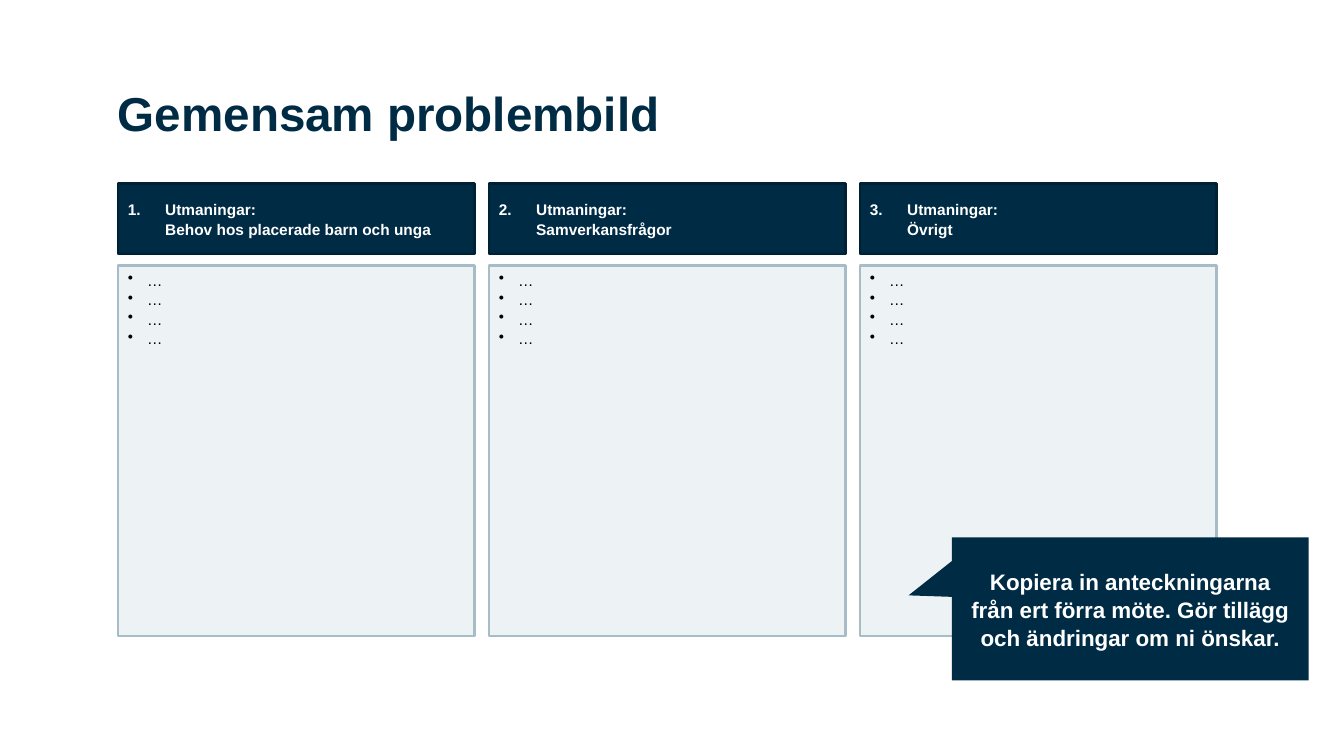
from copy import deepcopy
from dataclasses import dataclass

from lxml import etree
from pptx import Presentation
from pptx.dml.color import RGBColor
from pptx.enum.shapes import MSO_SHAPE
from pptx.enum.text import MSO_ANCHOR, PP_ALIGN
from pptx.oxml.ns import qn
from pptx.util import Inches, Pt

RECTANGLE = MSO_SHAPE.RECTANGLE
CALLOUT = MSO_SHAPE.RECTANGULAR_CALLOUT
TOP, MIDDLE = MSO_ANCHOR.TOP, MSO_ANCHOR.MIDDLE
LEFT, CENTER = PP_ALIGN.LEFT, PP_ALIGN.CENTER
TITLE_ONLY = 5


@dataclass(frozen=True)
class Theme:
    font: str = "Arial"
    navy: RGBColor = RGBColor(0x00, 0x2B, 0x45)
    navy_edge: RGBColor = RGBColor(0x00, 0x20, 0x33)
    pale: RGBColor = RGBColor(0xED, 0xF2, 0xF4)
    pale_edge: RGBColor = RGBColor(0xA6, 0xBC, 0xC6)
    white: RGBColor = RGBColor(0xFF, 0xFF, 0xFF)
    black: RGBColor = RGBColor(0x00, 0x00, 0x00)
    title_size: int = 34
    callout_size: int = 16
    body_size: int = 11
    line_spacing: float = 1.05


THEME = Theme()

CHALLENGES = [
    "Utmaningar: \vBehov hos placerade barn och unga",
    "Utmaningar:\vSamverkansfrågor",
    "Utmaningar:\vÖvrigt",
]
NOTES = "\n".join(["…"] * 4)
INSTRUCTION = ("Kopiera in anteckningarna\v"
               "från ert förra möte. Gör tillägg och ändringar om ni önskar.")


def style_text(frame, size, color, bold, align=LEFT):
    for paragraph in frame.paragraphs:
        paragraph.alignment = align
        paragraph.line_spacing = THEME.line_spacing
        for run in paragraph.runs:
            run.font.name = THEME.font
            run.font.size = Pt(size)
            run.font.bold = bold
            run.font.color.rgb = color
        # Line breaks take the size of the text around them
        for line_break in paragraph._p.findall(qn("a:br")):
            line_break.insert(0, deepcopy(paragraph.runs[0]._r.rPr))


def add_marker(paragraph, indent, tag, **attributes):
    properties = paragraph._p.get_or_add_pPr()
    properties.set("marL", str(Inches(indent)))
    properties.set("indent", str(-Inches(indent)))
    etree.SubElement(properties, qn(tag), attributes)


def add_panel(slide, kind, box, fill, edge, text, anchor):
    panel = slide.shapes.add_shape(kind, *map(Inches, box))
    panel.shadow.inherit = False
    panel.fill.solid()
    panel.fill.fore_color.rgb = fill
    if edge is None:
        panel.line.fill.background()
    else:
        panel.line.color.rgb = edge
        panel.line.width = Pt(2)
    panel.text_frame.word_wrap = True
    panel.text_frame.vertical_anchor = anchor
    panel.text_frame.text = text
    return panel


def add_title(slide, box):
    title = slide.shapes.title
    title.left, title.top, title.width, title.height = map(Inches, box)
    frame = title.text_frame
    frame.margin_left = frame.margin_right = frame.margin_bottom = 0
    frame.margin_top = Inches(0.05)
    frame.vertical_anchor = TOP
    frame.text = "Gemensam problembild"
    style_text(frame, THEME.title_size, THEME.navy, True)


def add_challenge(slide, box, number, heading):
    left, top, width, height = box
    header_height, gap = 0.7, 0.11

    # Numbered header
    header = add_panel(slide, RECTANGLE, (left, top, width, header_height),
                       THEME.navy, THEME.navy_edge, heading, MIDDLE).text_frame
    add_marker(header.paragraphs[0], 0.37, "a:buAutoNum",
               type="arabicPeriod", startAt=str(number))
    style_text(header, THEME.body_size, THEME.white, True)

    # Bulleted notes
    offset = header_height + gap
    notes = add_panel(slide, RECTANGLE,
                      (left, top + offset, width, height - offset),
                      THEME.pale, THEME.pale_edge, NOTES, TOP).text_frame
    for paragraph in notes.paragraphs:
        add_marker(paragraph, 0.19, "a:buChar", char="•")
    style_text(notes, THEME.body_size, THEME.black, False)


def add_challenges(slide, box):
    left, top, width, height = box
    gap = 0.14
    column = (width - gap * (len(CHALLENGES) - 1)) / len(CHALLENGES)
    for index, heading in enumerate(CHALLENGES):
        add_challenge(slide, (left + index * (column + gap), top, column, height),
                      index + 1, heading)


def add_instruction(slide, box):
    callout = add_panel(slide, CALLOUT, box, THEME.navy, None, INSTRUCTION, MIDDLE)
    callout.adjustments[0] = -0.621
    callout.adjustments[1] = -0.094
    style_text(callout.text_frame, THEME.callout_size, THEME.white, True, CENTER)


def main():
    deck = Presentation()
    deck.slide_width, deck.slide_height = Inches(13.33), Inches(7.5)
    slide = deck.slides.add_slide(deck.slide_layouts[TITLE_ONLY])
    add_title(slide, (1.17, 0.75, 10.14, 1.42))
    add_challenges(slide, (1.17, 1.82, 10.9, 4.49))
    add_instruction(slide, (9.44, 5.33, 3.54, 1.42))
    deck.save("out.pptx")


if __name__ == "__main__":
    main()
